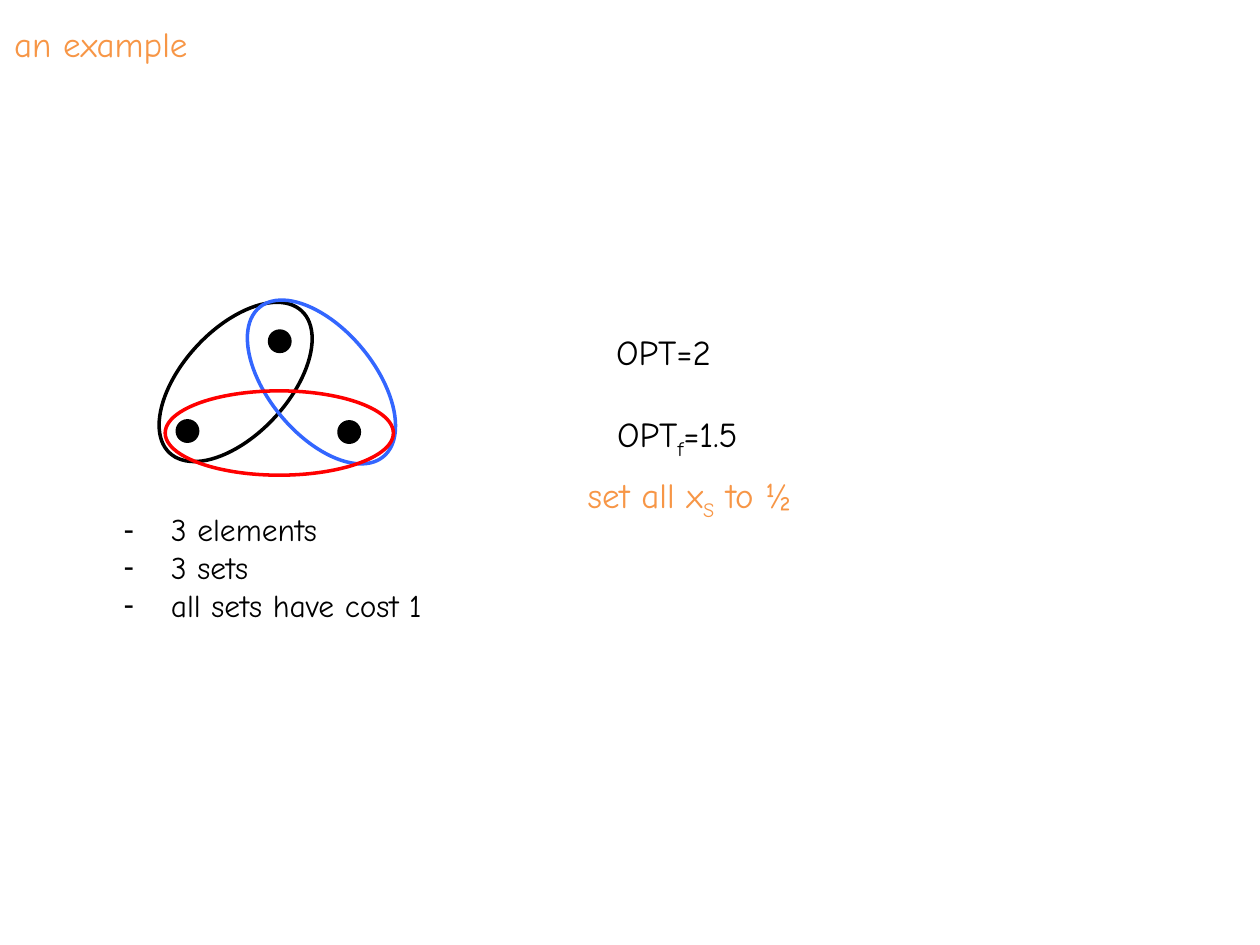
from dataclasses import dataclass

from lxml.etree import SubElement
from pptx import Presentation
from pptx.dml.color import RGBColor as Rgb
from pptx.enum.shapes import MSO_SHAPE as Preset
from pptx.enum.text import MSO_ANCHOR as Anchor, MSO_AUTO_SIZE as AutoSize, PP_ALIGN as Align
from pptx.oxml.ns import qn
from pptx.util import Cm, Pt


@dataclass(frozen=True)
class Theme:
    font: str = "Comic Neue"
    ink: str = "000000"
    accent: str = "F79646"
    blue: str = "3366FF"
    red: str = "FF0000"
    text_size: int = 20
    list_size: int = 18
    line_width: int = 2


def add_text(paragraph, text, *, theme, size, color, baseline=0):
    """Add one run; baseline is a percentage, negative for a subscript."""
    run = paragraph.add_run()
    run.text = text
    run.font.name = theme.font
    run.font.size = Pt(size)
    run.font.color.rgb = Rgb.from_string(color)
    if baseline:
        run.font._element.set("baseline", str(baseline * 1000))


class SlideBuilder:
    def __init__(self, slide, theme):
        self.slide = slide
        self.theme = theme

    def place(self, holder, left, top, width, height):
        holder.left, holder.top = Cm(left), Cm(top)
        holder.width, holder.height = Cm(width), Cm(height)
        frame = holder.text_frame
        frame.word_wrap = True
        frame.auto_size = AutoSize.NONE
        frame.vertical_anchor = Anchor.TOP
        return frame

    def title(self, text, *box):
        paragraph = self.place(self.slide.shapes.title, *box).paragraphs[0]
        paragraph.alignment = Align.LEFT
        add_text(paragraph, text, theme=self.theme,
                 size=self.theme.text_size, color=self.theme.accent)

    def dash_list(self, items, *box):
        frame = self.place(self.slide.placeholders[1], *box)
        for index, item in enumerate(items):
            paragraph = frame.add_paragraph() if index else frame.paragraphs[0]
            paragraph.space_before = Pt(0)
            add_text(paragraph, item, theme=self.theme,
                     size=self.theme.list_size, color=self.theme.ink)
            properties = paragraph._p.get_or_add_pPr()
            indent = Cm(0.95)
            properties.set("marL", str(indent))
            properties.set("indent", str(-indent))
            SubElement(properties, qn("a:buChar"), char="-")

    def formula(self, parts, *box, color, align=Align.LEFT):
        """Write parts in one line; every second part is a subscript."""
        left, top, width, height = (Cm(length) for length in box)
        label = self.slide.shapes.add_textbox(left, top, width, height)
        paragraph = self.place(label, *box).paragraphs[0]
        paragraph.alignment = align
        for index, part in enumerate(parts):
            add_text(paragraph, part, theme=self.theme, size=self.theme.text_size,
                     color=color, baseline=-25 if index % 2 else 0)

    def ellipse(self, center, width, height, color, *, filled=False, rotation=0):
        x, y = center
        oval = self.slide.shapes.add_shape(
            Preset.OVAL, Cm(x - width / 2), Cm(y - height / 2), Cm(width), Cm(height))
        oval.shadow.inherit = False
        oval.rotation = rotation
        oval.line.color.rgb = Rgb.from_string(color)
        oval.line.width = Pt(self.theme.line_width)
        if filled:
            oval.fill.solid()
            oval.fill.fore_color.rgb = Rgb.from_string(color)
        else:
            oval.fill.background()


def main():
    deck = Presentation()
    deck.slide_width, deck.slide_height = Cm(25.4), Cm(19.05)
    theme = Theme()
    builder = SlideBuilder(deck.slides.add_slide(deck.slide_layouts[1]), theme)

    builder.title("an example", 0.03, 0.33, 5.21, 1.12)
    builder.dash_list(["3 elements", "3 sets", "all sets have cost 1"],
                      2.24, 10.16, 7.87, 2.57)

    for element in [(3.78, 8.69), (5.64, 6.88), (7.04, 8.71)]:
        builder.ellipse(element, 0.41, 0.41, theme.ink, filled=True)

    for center, width, height, color, rotation in [
        ((4.75, 7.7), 2.13, 3.91, theme.ink, 42.9),
        ((6.48, 7.7), 2.13, 3.91, theme.blue, 140.3),
        ((5.63, 8.73), 1.7, 4.6, theme.red, 90),
    ]:
        builder.ellipse(center, width, height, color, rotation=rotation)

    builder.formula(["OPT=2"], 12.17, 6.53, 4.19, 1.12, color=theme.ink)
    builder.formula(["OPT", "f", "=1.5"], 12.19, 8.2, 4.19, 1.12, color=theme.ink)
    builder.formula(["set all x", "S", " to ½ "], 10.59, 9.42, 6.86, 1.12,
                    color=theme.accent, align=Align.CENTER)

    deck.save("out.pptx")


if __name__ == "__main__":
    main()
